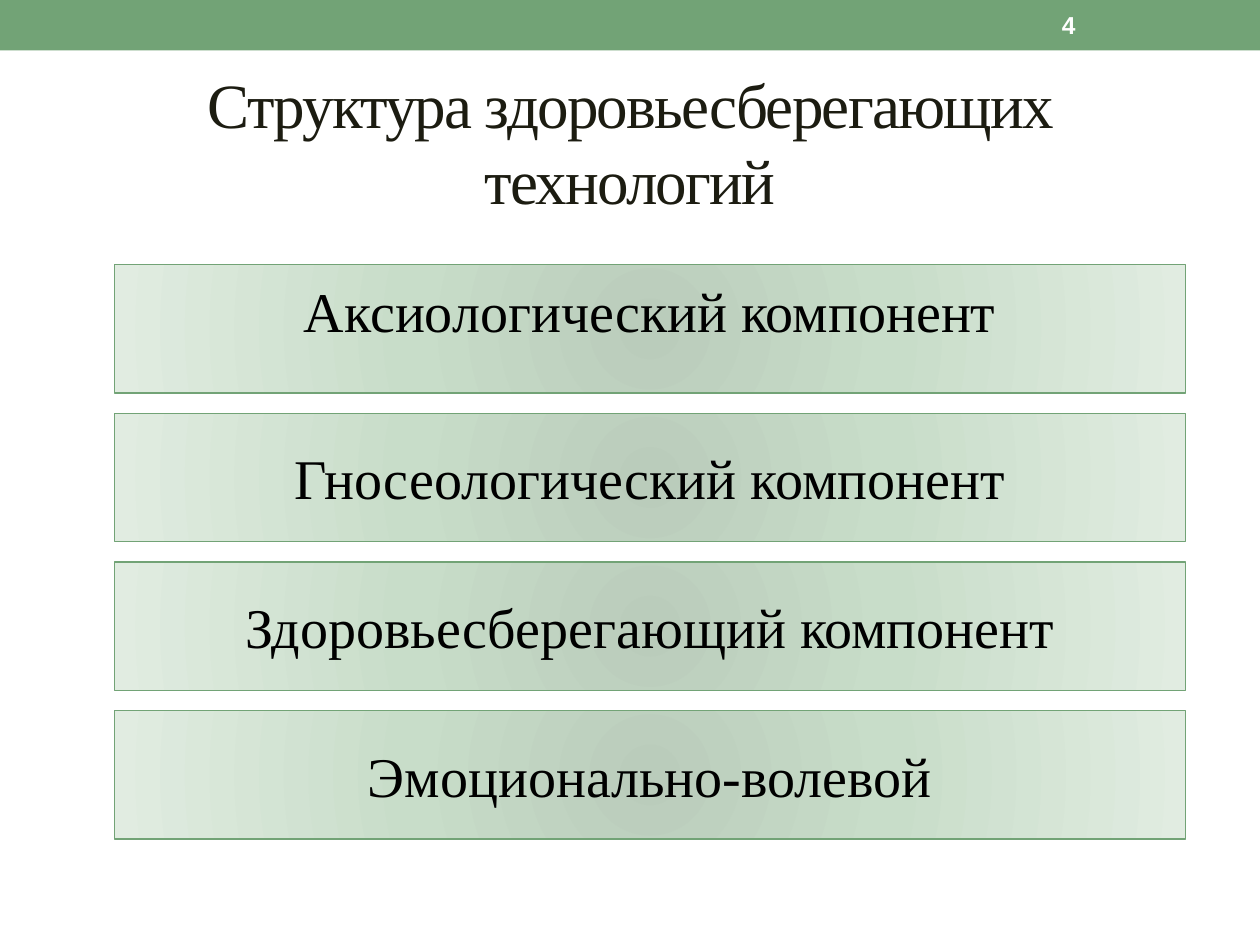
from dataclasses import dataclass

from lxml import etree
from pptx import Presentation
from pptx.dml.color import RGBColor
from pptx.enum.shapes import MSO_SHAPE
from pptx.enum.text import MSO_ANCHOR, PP_ALIGN
from pptx.oxml import parse_xml
from pptx.util import Inches, Pt

RECT = MSO_SHAPE.RECTANGLE
MIDDLE = MSO_ANCHOR.MIDDLE
LEFT, CENTER = PP_ALIGN.LEFT, PP_ALIGN.CENTER
NS = "http://schemas.openxmlformats.org/drawingml/2006/main"


@dataclass(frozen=True)
class Theme:
    green: str = "72A376"
    title: str = "1C1C11"
    white: str = "FFFFFF"
    black: str = "000000"
    glow: tuple = ((0, "BACCBB"), (45, "C8DDC9"), (100, "E1ECE1"))
    serif: str = "Times New Roman"
    sans: str = "Arial"
    title_size: int = 36
    item_size: int = 32
    number_size: int = 14


THEME = Theme()
WIDTH, HEIGHT = 10, 7.5
ITEM_LEFT, ITEM_TOP = 0.91, 2.1
ITEM_WIDTH, ITEM_HEIGHT, ITEM_PITCH = 8.5, 1.02, 1.18
FIRST_ITEM_INSET = 0.34
COMPONENTS = (
    "Аксиологический компонент",
    "Гносеологический компонент",
    "Здоровьесберегающий компонент",
    "Эмоционально-волевой",
)


def write(sp, text, *, size, color, font=THEME.serif, bold=False,
          align=CENTER, spacing=0, bottom=0.05):
    tf = sp.text_frame
    tf.word_wrap = True
    tf.vertical_anchor = MIDDLE
    tf.margin_bottom = Inches(bottom)
    p = tf.paragraphs[0]
    p.alignment = align
    r = p.add_run()
    r.text = text
    r.font.size = Pt(size)
    r.font.name = font
    r.font.bold = bold
    r.font.color.rgb = RGBColor.from_string(color)
    if spacing:
        r._r.get_or_add_rPr().set("spc", str(spacing * 100))


def add_text(s, box, text, **style):
    sp = s.shapes.add_textbox(*map(Inches, box))
    write(sp, text, **style)


def add_rect(s, box):
    sp = s.shapes.add_shape(RECT, *map(Inches, box))
    sp.shadow.inherit = False
    return sp


def fill_radial(sp, stops):
    grad = parse_xml(f'<a:gradFill xmlns:a="{NS}" rotWithShape="1"><a:gsLst/>'
                     '<a:path path="circle"><a:fillToRect l="100000" '
                     't="100000" r="100000" b="100000"/></a:path></a:gradFill>')
    for pos, color in stops:
        gs = etree.SubElement(grad[0], f"{{{NS}}}gs", pos=str(pos * 1000))
        etree.SubElement(gs, f"{{{NS}}}srgbClr", val=color)
    sp._element.spPr.find(f"{{{NS}}}prstGeom").addnext(grad)


def add_header(s):
    sp = add_rect(s, (0, 0, WIDTH, 0.4))
    sp.fill.solid()
    sp.fill.fore_color.rgb = RGBColor.from_string(THEME.green)
    sp.line.fill.background()
    add_text(s, (8.33, 0.02, 1.17, 0.36), "4", size=THEME.number_size,
             color=THEME.white, font=THEME.sans, bold=True, align=LEFT)


def add_component(s, row, text):
    top = ITEM_TOP + row * ITEM_PITCH
    sp = add_rect(s, (ITEM_LEFT, top, ITEM_WIDTH, ITEM_HEIGHT))
    fill_radial(sp, THEME.glow)
    sp.line.color.rgb = RGBColor.from_string(THEME.green)
    sp.line.width = Pt(0.75)
    write(sp, text, size=THEME.item_size, color=THEME.black,
          bottom=0.05 if row else FIRST_ITEM_INSET)


def main():
    prs = Presentation()
    prs.slide_width, prs.slide_height = Inches(WIDTH), Inches(HEIGHT)
    s = prs.slides.add_slide(prs.slide_layouts[6])
    add_header(s)
    add_text(s, (0.5, 0.58, 9, 1.08),
             "Структура здоровьесберегающих технологий",
             size=THEME.title_size, color=THEME.title, spacing=-1)
    for row, text in enumerate(COMPONENTS):
        add_component(s, row, text)
    prs.save("out.pptx")


if __name__ == "__main__":
    main()
